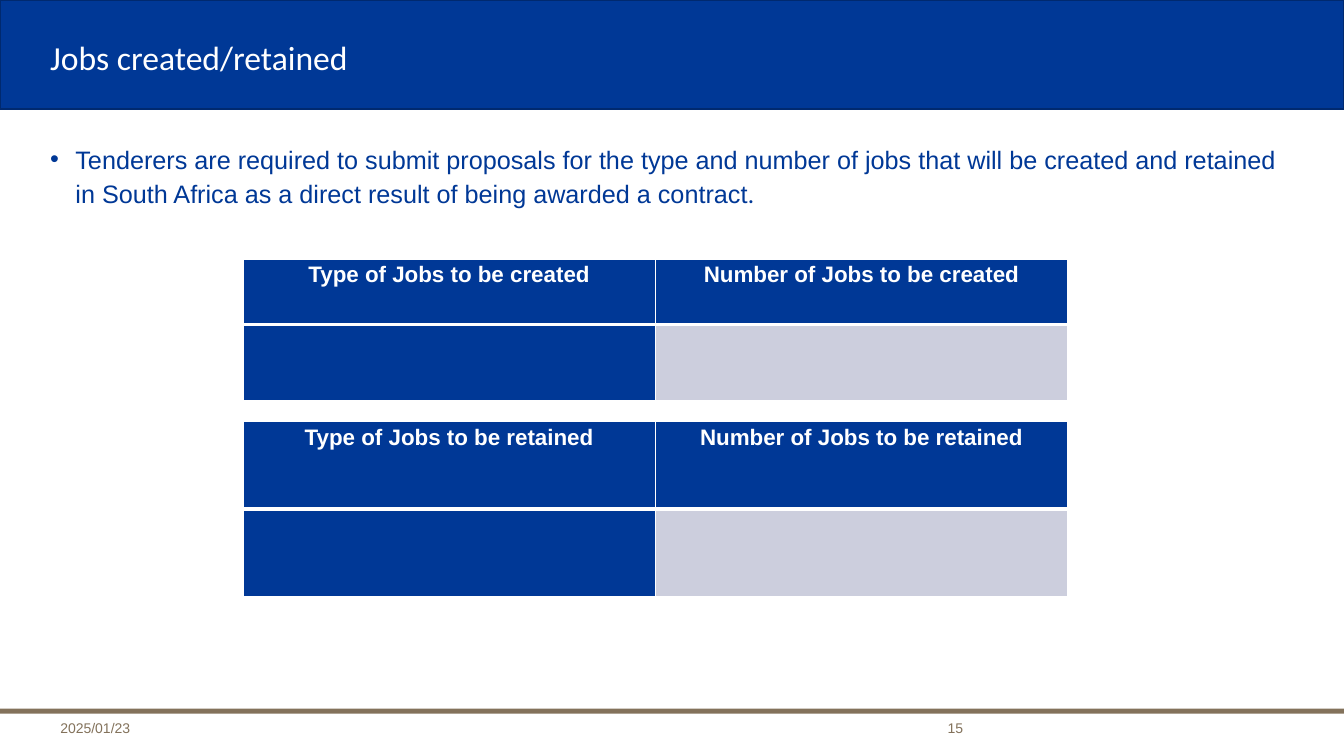
import pptx
import pptx.util
import pptx.dml.color
import pptx.enum.shapes
import pptx.enum.text
import pptx.oxml.ns
import lxml.etree

WIDTH, HEIGHT = 13.33, 7.5
BLUE, NAVY, TAUPE, GREY, WHITE = "003896", "00296F", "83725B", "CCCEDD", "FFFFFF"
ALIGN = pptx.enum.text.PP_ALIGN
ANCHOR = pptx.enum.text.MSO_ANCHOR

TITLE = "Jobs created/retained"
BODY = [
    ("Tenderers are required to submit proposals for the type and number of jobs that will be "
     "created and retained in South Africa as a direct result of being awarded a contract", "Arial"),
    (".", "Calibri"),
]
DATE, NUMBER = "2025/01/23", "15"
BANDS = [(0, 1.08, BLUE, NAVY), (7.03, 0.05, TAUPE, None)]
TABLE_LEFT, TABLE_COLUMN = 2.41, 4.09
TABLES = [
    (2.57, (0.65, 0.75), ("Type of Jobs to be created", "Number of Jobs to be created")),
    (4.18, (0.87, 0.87), ("Type of Jobs to be retained", "Number of Jobs to be retained")),
]
FILLS = [(BLUE, BLUE), (BLUE, GREY)]
BOTTOM_BORDERS = [3, 1]


def inches(*lengths):
    return [pptx.util.Inches(length) for length in lengths]


def color(value):
    return pptx.dml.color.RGBColor.from_string(value)


def add_element(parent, tag, **attributes):
    element = lxml.etree.SubElement(parent, pptx.oxml.ns.qn(tag))
    for name, value in attributes.items():
        element.set(name, str(value))
    return element


def add_span(para, text, size, font, tint, bold=False):
    span = para.add_run()
    span.text = text
    span.font.size = pptx.util.Pt(size)
    span.font.name = font
    span.font.bold = bold
    span.font.color.rgb = color(tint)


def add_box(page, place, anchor, align=ALIGN.LEFT):
    frame = page.shapes.add_textbox(*inches(*place)).text_frame
    frame.word_wrap = True
    frame.vertical_anchor = anchor
    para = frame.paragraphs[0]
    para.alignment = align
    return para


def add_band(page, top, height, fill, line):
    band = page.shapes.add_shape(
        pptx.enum.shapes.MSO_SHAPE.RECTANGLE, *inches(0, top, WIDTH, height))
    band.shadow.inherit = False
    band.fill.solid()
    band.fill.fore_color.rgb = color(fill)
    if line:
        band.line.color.rgb = color(line)
        band.line.width = pptx.util.Pt(1)
    else:
        band.line.fill.background()


def style_cell(cell, fill, bottom):
    properties = cell._tc.get_or_add_tcPr()
    for side, width in (("L", 1), ("R", 1), ("T", 1), ("B", bottom)):
        border = add_element(properties, "a:ln" + side, w=pptx.util.Pt(width))
        add_element(add_element(border, "a:solidFill"), "a:srgbClr", val=WHITE)
    cell.fill.solid()
    cell.fill.fore_color.rgb = color(fill)


def add_job_table(page, top, heights, headings):
    place = inches(TABLE_LEFT, top, TABLE_COLUMN * 2, sum(heights))
    table = page.shapes.add_table(2, 2, *place).table
    for column in table.columns:
        column.width = pptx.util.Inches(TABLE_COLUMN)
    for row, height in enumerate(heights):
        table.rows[row].height = pptx.util.Inches(height)
        for column, fill in enumerate(FILLS[row]):
            style_cell(table.cell(row, column), fill, BOTTOM_BORDERS[row])
    for column, heading in enumerate(headings):
        cell = table.cell(0, column)
        cell.margin_left = cell.margin_right = pptx.util.Inches(0.07)
        cell.margin_top = cell.margin_bottom = 0
        para = cell.text_frame.paragraphs[0]
        para.alignment = ALIGN.CENTER
        para.line_spacing = 1.15
        add_span(para, heading, 16, "Arial", WHITE, True)


def main():
    deck = pptx.Presentation()
    deck.slide_width, deck.slide_height = inches(WIDTH, HEIGHT)
    page = deck.slides.add_slide(deck.slide_layouts[6])
    for band in BANDS:
        add_band(page, *band)

    title = add_box(page, (0.4, 0.23, 10.4, 0.73), ANCHOR.MIDDLE)
    title.line_spacing = 0.9
    add_span(title, TITLE, 24, "Calibri", WHITE)

    date = add_box(page, (0.5, 7.06, 1.9, 0.29), ANCHOR.BOTTOM)
    add_span(date, DATE, 10, "Arial", TAUPE)
    number = add_box(page, (7.84, 7.06, 1.81, 0.29), ANCHOR.BOTTOM, ALIGN.RIGHT)
    add_span(number, NUMBER, 10, "Arial", TAUPE)

    body = add_box(page, (0.4, 1.34, 12.57, 5.31), ANCHOR.TOP)
    properties = body._p.get_or_add_pPr()
    indent = pptx.util.Inches(0.25)
    properties.set("marL", str(indent))
    properties.set("indent", str(-indent))
    add_element(properties, "a:buFont", typeface="Arial")
    add_element(properties, "a:buChar", char="•")
    body.line_spacing = 1.13
    body.space_after = pptx.util.Pt(3)
    for text, font in BODY:
        add_span(body, text, 18, font, BLUE)

    for table in TABLES:
        add_job_table(page, *table)
    deck.save("out.pptx")


if __name__ == "__main__":
    main()
